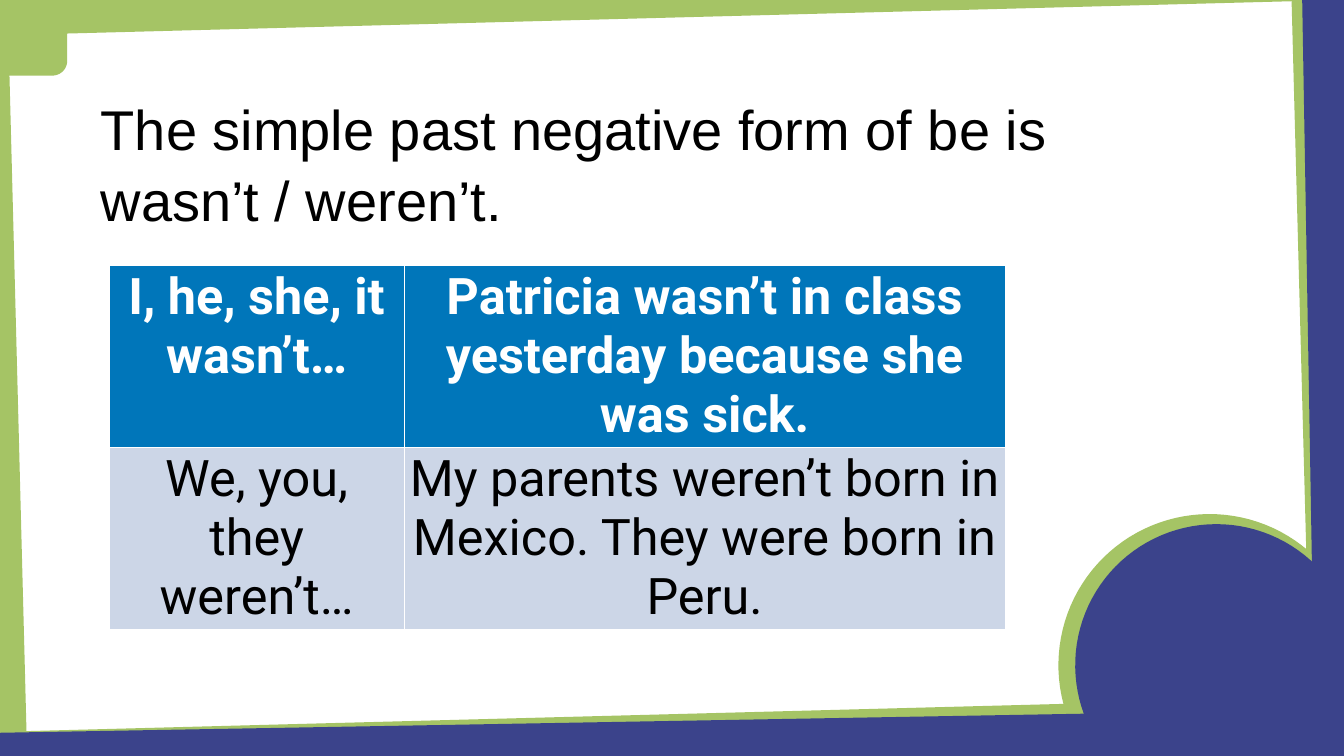
from math import acos, asin, cos, degrees, radians, sin

from pptx import Presentation
from pptx.dml.color import RGBColor as Rgb
from pptx.enum.text import MSO_ANCHOR as Anchor, MSO_AUTO_SIZE as Fit, PP_ALIGN as Align
from pptx.util import Inches, Pt

W, H = 26.67, 15
HEX = {"green": "A5C465", "navy": "3B438B", "blue": "0076BA",
       "pale": "CCD6E7", "white": "FFFFFF", "black": "000000"}
BARS = [
    ("green", [(96.1, 0), (97.6, 100), (99.25, 100), (97.75, 0)]),
    ("green", [(0, 0), (0, 4.67), (99.59, 0)]),
    ("green", [(100, 92.13), (0, 96.8), (0, 99.13), (100, 94.53)]),
    ("green", [(0, 0), (0, 100), (2.02, 100), (0.56, 0)]),
    ("navy", [(96.89, 0), (97.86, 100), (100, 100), (100, 0)]),
    ("navy", [(100, 93.8), (0, 96.93), (0, 100), (100, 100)]),
]
ROWS = [
    ("I, he, she, it wasn’t…", "Patricia wasn’t in class yesterday because she was sick."),
    ("We, you, they weren’t…", "My parents weren’t born in Mexico. They were born in Peru."),
]
TITLE = ["The simple past negative form of be is", "wasn’t / weren’t."]


def color(name):
    """Return the named colour."""
    return Rgb.from_string(HEX[name])


def arc(x, y, r, start, end, steps=60):
    """Return points along an arc, with angles in degrees."""
    turns = [radians(start + (end - start) * i / steps) for i in range(steps + 1)]
    return [(x + r * cos(t), y + r * sin(t)) for t in turns]


def draw(slide, pts, tone):
    """Draw a filled outline through points in inches."""
    pts = [(Inches(x), Inches(y)) for x, y in pts]
    pen = slide.shapes.build_freeform(*pts[0], scale=1.0)
    pen.add_line_segments(pts[1:], close=True)
    shape = pen.convert_to_shape()
    shape.shadow.inherit = False
    shape.fill.solid()
    shape.fill.fore_color.rgb = color(tone)
    shape.line.fill.background()


def add_disc(slide, box, x, y, r, tone):
    """Draw a disc cut off by the right and bottom edges of the box."""
    left, top, wide, high = box
    right, low = left + wide, top + high
    start = 180 - degrees(asin((low - y) / r))
    end = 360 - degrees(acos((right - x) / r))
    draw(slide, arc(x, y, r, start, end) + [(right, low)], tone)


def add_tab(slide, box):
    """Draw the corner tab with one rounded corner."""
    x, y, wide, high = box
    r = wide * 0.22
    curve = arc(x + wide - r, y + high - r, r, 90, 0, 16)
    draw(slide, [(x, y), (x, y + high)] + curve + [(x + wide, y)], "green")


def add_frame(slide, box):
    """Draw the slanted frame with its tab and discs."""
    x, y, wide, high = box
    add_disc(slide, box, x + wide * 0.9, y + high * 0.88, 3, "green")
    add_tab(slide, (x, y, wide * 0.05, high * 0.1))
    for tone, pts in BARS:
        draw(slide, [(x + wide * a / 100, y + high * b / 100) for a, b in pts], tone)
    add_disc(slide, box, x + wide * 0.905, y + high * 0.88, 2.8, "navy")


def write(para, text, face, size, tone, bold=False):
    """Add one formatted run to a paragraph."""
    run = para.add_run()
    run.text = text
    font = run.font
    font.name, font.size, font.bold = face, Pt(size), bold
    font.color.rgb = color(tone)


def add_title(slide, box):
    """Place the title in its placeholder, in front of the frame."""
    title = slide.shapes.title
    title.left, title.top, title.width, title.height = map(Inches, box)
    title.element.getparent().append(title.element)
    frame = title.text_frame
    frame.word_wrap, frame.auto_size = True, Fit.NONE
    frame.vertical_anchor = Anchor.TOP
    frame.margin_left = frame.margin_right = Inches(0.2)
    frame.margin_top, frame.margin_bottom = Inches(0.18), Inches(0.1)
    for i, text in enumerate(TITLE):
        para = frame.add_paragraph() if i else frame.paragraphs[0]
        para.alignment, para.line_spacing = Align.LEFT, 1.05
        write(para, text, "Arial", 80, "black")


def add_forms(slide, box):
    """Place the table of negative forms, its first column a third wide."""
    grid = slide.shapes.add_table(len(ROWS), 2, *map(Inches, box)).table
    grid.horz_banding = False
    for col, share in zip(grid.columns, (0.33, 0.67)):
        col.width = Inches(box[2] * share)
    for r, row in enumerate(ROWS):
        fill, tone = ("pale", "black") if r else ("blue", "white")
        for c, text in enumerate(row):
            cell = grid.cell(r, c)
            cell.fill.solid()
            cell.fill.fore_color.rgb = color(fill)
            para = cell.text_frame.paragraphs[0]
            para.alignment = Align.CENTER
            write(para, text, "Roboto", 72, tone, r == 0)


def main():
    """Build and save the slide."""
    deck = Presentation()
    deck.slide_width, deck.slide_height = Inches(W), Inches(H)
    slide = deck.slides.add_slide(deck.slide_layouts[5])
    add_frame(slide, (0, 0, W, H))
    add_forms(slide, (2.16, 5.26, W * 2 / 3, H * 0.48))
    add_title(slide, (1.8, 1.63, W * 0.85, 2.89))
    deck.save("out.pptx")


if __name__ == "__main__":
    main()
